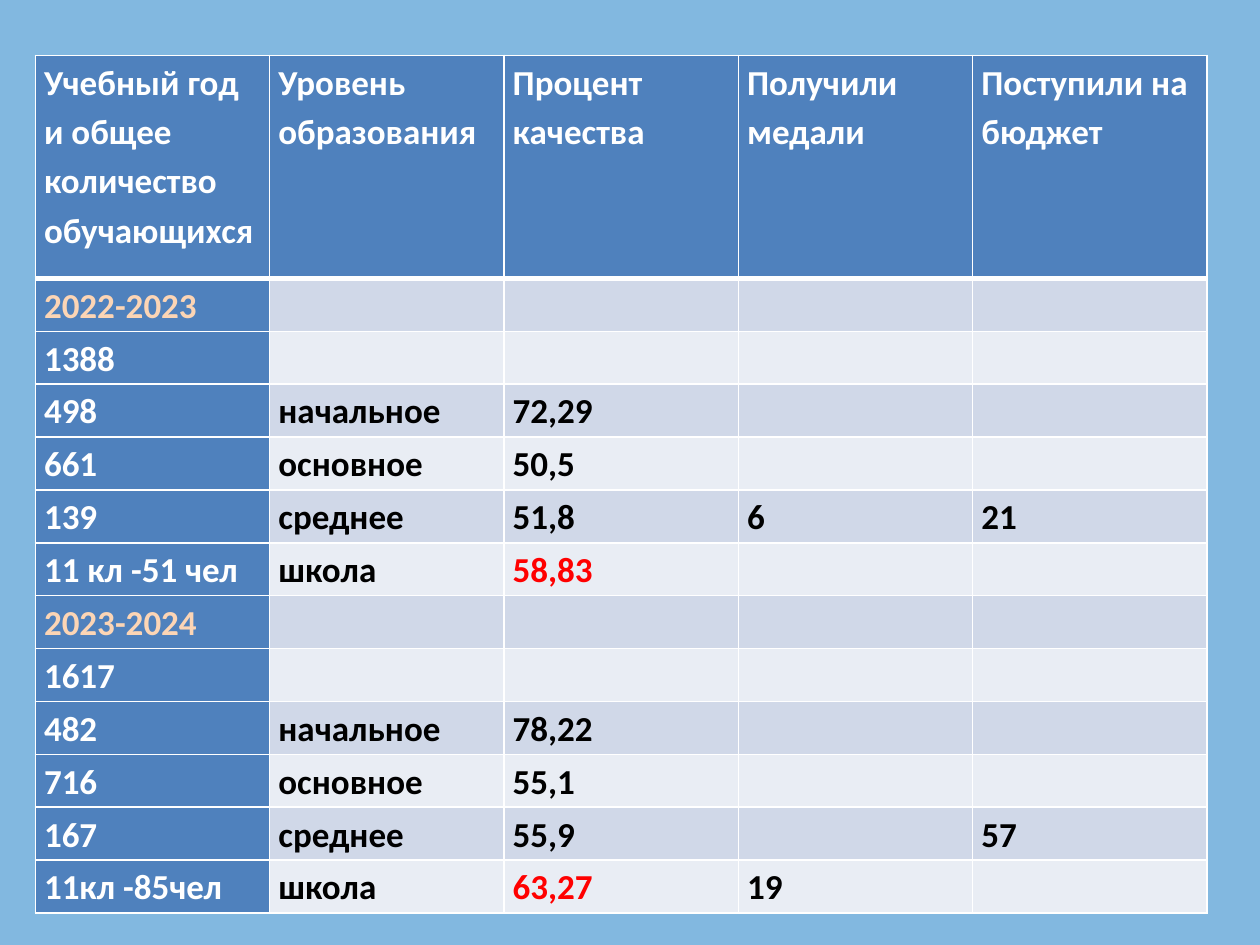
from lxml import etree
from pptx import Presentation
from pptx.dml.color import RGBColor
from pptx.oxml.ns import qn
from pptx.util import Inches, Pt

BLANK_LAYOUT = 6
WHITE, BLACK, RED, PEACH = "FFFFFF", "000000", "FF0000", "FCD5B5"
BLUE, BAND_DARK, BAND_LIGHT = "4F81BD", "D0D8E8", "E9EDF4"
BACKGROUND, BACKGROUND_ALPHA = "0070C0", 49

HEADINGS = [
    "Учебный год и общее количество обучающихся",
    "Уровень образования",
    "Процент качества",
    "Получили медали",
    "Поступили на бюджет",
]
YEARS = ["2022-2023", "2023-2024"]
RESULTS = [
    [YEARS[0], "", "", "", ""],
    ["1388", "", "", "", ""],
    ["498", "начальное", "72,29", "", ""],
    ["661", "основное", "50,5", "", ""],
    ["139", "среднее", "51,8", "6", "21"],
    ["11 кл -51 чел", "школа", "58,83", "", ""],
    [YEARS[1], "", "", "", ""],
    ["1617", "", "", "", ""],
    ["482", "начальное", "78,22", "", ""],
    ["716", "основное", "55,1", "", ""],
    ["167", "среднее", "55,9", "", "57"],
    ["11кл -85чел", "школа", "63,27", "19", ""],
]
SCHOOL_TOTALS = ["58,83", "63,27"]


def color(hex_code):
    return RGBColor.from_string(hex_code)


class SlideBuilder:
    font = "Calibri"
    size = Pt(20)
    line_spacing = 1.15
    side_margin = Inches(0.07)

    def __init__(self, slide):
        self.slide = slide

    def background(self, hex_code, alpha):
        fill = self.slide.background.fill
        fill.solid()
        fill.fore_color.rgb = color(hex_code)
        tint = self.slide.background._cSld.find(".//" + qn("a:srgbClr"))
        etree.SubElement(tint, qn("a:alpha"), val=str(alpha * 1000))

    def borders(self, cell, top, bottom):
        """Draw white cell borders; top and bottom are widths in points."""
        properties = cell._tc.get_or_add_tcPr()
        for side, width in (("L", 1), ("R", 1), ("T", top), ("B", bottom)):
            line = etree.SubElement(properties, qn(f"a:ln{side}"), w=str(Pt(width)))
            fill = etree.SubElement(line, qn("a:solidFill"))
            etree.SubElement(fill, qn("a:srgbClr"), val=WHITE)

    def cell(self, cell, text, fill, text_color):
        cell.margin_left = cell.margin_right = self.side_margin
        cell.margin_top = cell.margin_bottom = 0
        cell.fill.solid()
        cell.fill.fore_color.rgb = color(fill)
        cell.text_frame.text = text
        paragraph = cell.text_frame.paragraphs[0]
        paragraph.line_spacing = self.line_spacing
        font = paragraph.runs[0].font if text else paragraph.font
        font.name, font.size, font.bold = self.font, self.size, True
        font.color.rgb = color(text_color)

    def table(self, rows, left, top, column_width, header_height, row_height):
        columns = len(rows[0])
        height = header_height + row_height * (len(rows) - 1)
        table = self.slide.shapes.add_table(
            len(rows), columns, left, top, column_width * columns, height
        ).table
        for column in table.columns:
            column.width = column_width
        for r, values in enumerate(rows):
            table.rows[r].height = row_height if r else header_height
            band = BAND_DARK if r % 2 else BAND_LIGHT
            for c, text in enumerate(values):
                is_heading = r == 0 or c == 0
                text_color = WHITE if is_heading else BLACK
                if text in YEARS:
                    text_color = PEACH
                elif text in SCHOOL_TOTALS:
                    text_color = RED
                cell = table.cell(r, c)
                self.borders(cell, 3 if r == 1 else 1, 3 if r == 0 else 1)
                self.cell(cell, text, BLUE if is_heading else band, text_color)


def main():
    presentation = Presentation()
    presentation.slide_width, presentation.slide_height = Inches(10), Inches(7.5)
    layout = presentation.slide_layouts[BLANK_LAYOUT]
    builder = SlideBuilder(presentation.slides.add_slide(layout))
    builder.background(BACKGROUND, BACKGROUND_ALPHA)
    builder.table(
        [HEADINGS] + RESULTS,
        left=Inches(0.28),
        top=Inches(0.44),
        column_width=Inches(1.86),
        header_height=Inches(1.77),
        row_height=Inches(0.42),
    )
    presentation.save("out.pptx")


if __name__ == "__main__":
    main()
